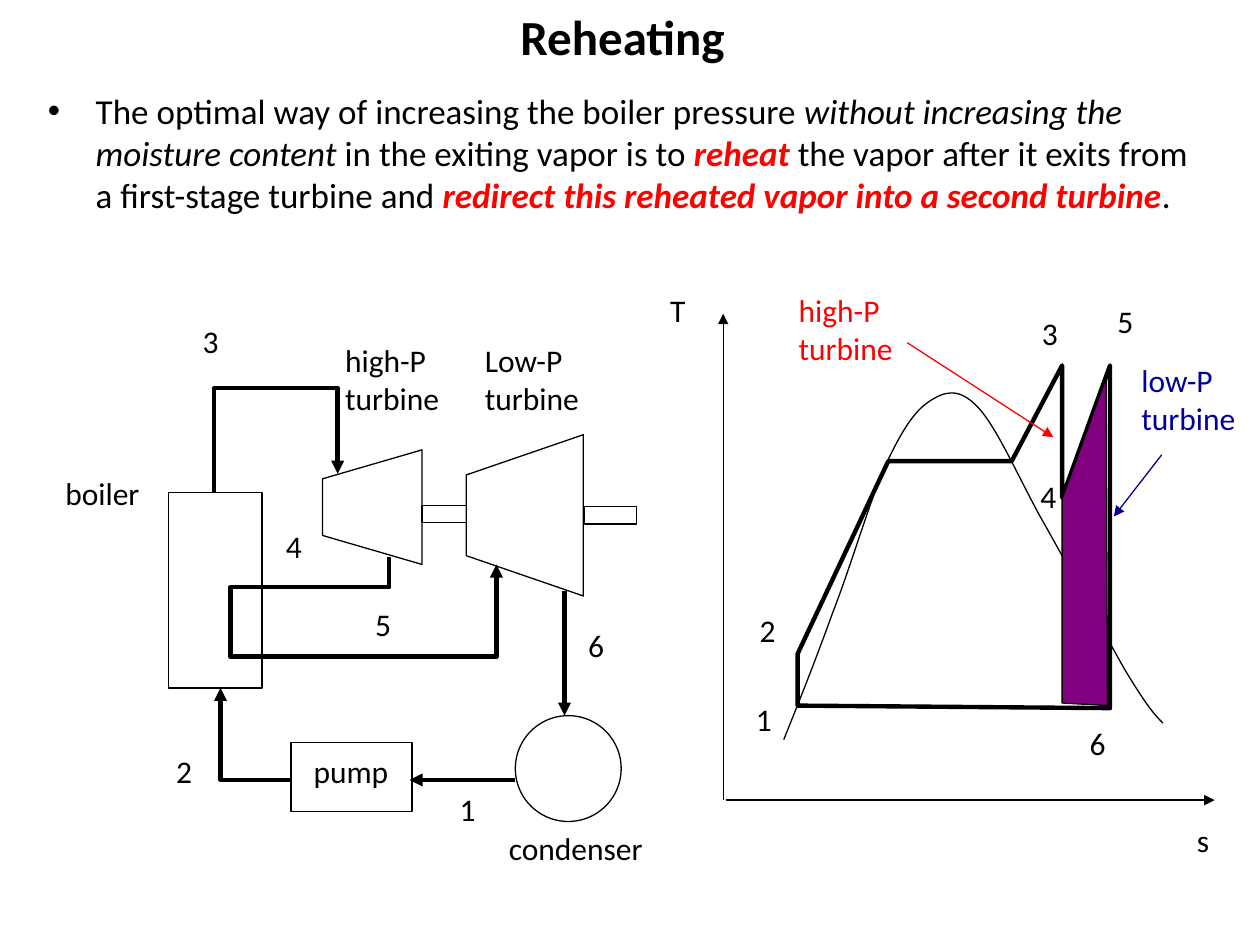
"""Build a slide on reheating: a plant diagram beside its T-s chart."""
from lxml.etree import SubElement
from pptx import Presentation
from pptx.dml.color import RGBColor
from pptx.enum.shapes import MSO_CONNECTOR, MSO_SHAPE
from pptx.enum.text import MSO_ANCHOR, MSO_AUTO_SIZE, PP_ALIGN
from pptx.oxml.ns import qn
from pptx.util import Inches, Pt

BLACK = RGBColor(0x00, 0x00, 0x00)
RED = RGBColor(0xFF, 0x00, 0x00)
BLUE = RGBColor(0x00, 0x00, 0x99)
PURPLE = RGBColor(0x80, 0x00, 0x80)
FONT = "Calibri"
THIN, THICK = 0.75, 2.5

TITLE = "Reheating"
STRONG = dict(color=RED, bold=True, italic=True)
BODY = [
    ("The optimal way of increasing the boiler pressure ", {}),
    ("without increasing the moisture content", dict(italic=True)),
    (" in the exiting vapor is to ", {}),
    ("reheat", STRONG),
    (" the vapor after it exits from a first-stage turbine and ", {}),
    ("redirect this reheated vapor into a second turbine", STRONG),
    (".", {}),
]

BOILER = (MSO_SHAPE.RECTANGLE, 1.34, 3.91, 0.74, 1.55)
HIGH_SHAFT = (MSO_SHAPE.RECTANGLE, 3.35, 4.01, 0.35, 0.14)
LOW_SHAFT = (MSO_SHAPE.RECTANGLE, 4.64, 4.02, 0.41, 0.14)
CONDENSER = (MSO_SHAPE.OVAL, 4.09, 5.68, 0.84, 0.84)
PUMP = (MSO_SHAPE.RECTANGLE, 2.31, 5.89, 0.96, 0.55)

TURBINES = [
    [(3.35, 3.57), (2.56, 3.8), (2.56, 4.25), (3.35, 4.48)],
    [(4.63, 3.45), (3.7, 3.77), (3.7, 4.41), (4.63, 4.73)],
]
PIPES = [
    [(1.7, 3.91), (1.7, 3.08), (2.68, 3.08), (2.68, 3.76)],
    [(3.09, 4.42), (3.09, 4.66), (1.83, 4.66), (1.83, 5.21), (3.94, 5.21), (3.94, 4.48)],
    [(2.3, 6.19), (1.75, 6.19), (1.75, 5.46)],
]
DOME = [
    (6.22, 5.87),
    (6.35, 5.55), (6.48, 5.22), (6.61, 4.86),
    (6.75, 4.5), (6.9, 3.99), (7.02, 3.71),
    (7.15, 3.43), (7.25, 3.27), (7.37, 3.19),
    (7.49, 3.11), (7.6, 3.07), (7.75, 3.22),
    (7.9, 3.37), (8.06, 3.74), (8.25, 4.09),
    (8.45, 4.44), (8.77, 5.04), (8.93, 5.32),
    (9.1, 5.6), (9.16, 5.67), (9.23, 5.74),
]
CYCLE = [(6.33, 5.6), (6.33, 5.19), (7.05, 3.66), (8.03, 3.66),
         (8.43, 2.9), (8.43, 3.95), (8.81, 2.9), (8.81, 5.62)]
REHEAT_AREA = [(8.43, 3.96), (8.78, 3), (8.79, 5.6), (8.43, 5.58)]

ARROWS = [
    ((4.48, 4.69), (4.48, 5.68), BLACK, THICK),
    ((4.09, 6.19), (3.25, 6.19), BLACK, THICK),
    ((5.74, 6.35), (5.74, 2.49), BLACK, THIN),
    ((5.76, 6.35), (9.64, 6.35), BLACK, THIN),
    ((7.2, 2.72), (8.36, 3.47), RED, THIN),
    ((9.22, 3.61), (8.84, 4.1), BLUE, THIN),
]

PLANT_LABELS = [
    ("boiler", 0.42, 3.71, 0.85), ("high-P\nturbine", 2.64, 2.66, 0.99),
    ("Low-P\nturbine", 3.75, 2.66, 0.99), ("pump", 2.39, 5.92, 0.83),
    ("condenser", 3.94, 6.53, 1.33),
]
CHART_LABELS = [("T", 5.22, 2.26, 0.37), ("s", 9.4, 6.47, 0.31)]
STATES = [
    ("1", 3.55, 6.22), ("2", 1.3, 5.92), ("3", 1.51, 2.51),
    ("4", 2.17, 4.13), ("5", 2.88, 4.75), ("6", 4.57, 4.92),
    ("1", 5.9, 5.51), ("2", 5.93, 4.8), ("3", 8.17, 2.44),
    ("4", 8.16, 3.74), ("5", 8.77, 2.35), ("6", 8.55, 5.7),
]
COLORED_LABELS = [
    ("high-P\nturbine", 6.24, 2.26, 0.99, RED),
    ("low-P\nturbine", 8.96, 2.82, 0.99, BLUE),
]


def add_text(para, text, size=18, color=BLACK, bold=False, italic=False):
    span = para.add_run()
    span.text = text
    font = span.font
    font.name, font.size, font.bold, font.italic = FONT, Pt(size), bold, italic
    font.color.rgb = color


def place(shape, left, top, width, height):
    shape.left, shape.top = Inches(left), Inches(top)
    shape.width, shape.height = Inches(width), Inches(height)


def style_line(shape, color=BLACK, weight=THIN, arrow=False):
    shape.line.color.rgb = color
    shape.line.width = Pt(weight)
    if arrow:
        SubElement(shape.line._get_or_add_ln(), qn("a:tailEnd"), type="triangle")


def style_shape(shape, fill=None, **line):
    shape.shadow.inherit = False
    if fill is None:
        shape.fill.background()
    else:
        shape.fill.solid()
        shape.fill.fore_color.rgb = fill
    style_line(shape, **line)


def add_outline(page, points, closed=False, **style):
    start, *rest = [(Inches(x), Inches(y)) for x, y in points]
    builder = page.shapes.build_freeform(*start)
    builder.add_line_segments(rest, close=closed)
    shape = builder.convert_to_shape()
    style_shape(shape, **style)
    return shape


def curve(shape):
    """Turn each three line segments into one cubic curve."""
    segments = list(shape._element.iter(qn("a:lnTo")))
    for first in range(0, len(segments), 3):
        group = segments[first:first + 3]
        bezier = SubElement(group[0].getparent(), qn("a:cubicBezTo"))
        for segment in group:
            bezier.append(segment[0])
            segment.getparent().remove(segment)


def add_arrow(page, start, end, color, weight):
    ends = [Inches(value) for value in (*start, *end)]
    arrow = page.shapes.add_connector(MSO_CONNECTOR.STRAIGHT, *ends)
    style_line(arrow, color, weight, arrow=True)
    SubElement(arrow._element.spPr, qn("a:effectLst"))


def add_label(page, text, left, top, width=0.34, color=BLACK):
    lines = text.split("\n")
    height = 0.09 + 0.34 * len(lines)
    box = page.shapes.add_textbox(*map(Inches, (left, top, width, height)))
    frame = box.text_frame
    frame.word_wrap = False
    frame.auto_size = MSO_AUTO_SIZE.SHAPE_TO_FIT_TEXT
    for index, line in enumerate(lines):
        para = frame.add_paragraph() if index else frame.paragraphs[0]
        add_text(para, line, color=color)


def add_heading(page):
    title, body = page.placeholders
    place(title, 0.69, 0, 8.5, 0.57)
    title.text_frame.vertical_anchor = MSO_ANCHOR.MIDDLE
    para = title.text_frame.paragraphs[0]
    para.alignment = PP_ALIGN.CENTER
    add_text(para, TITLE, size=28, bold=True)

    place(body, 0.28, 0.66, 9.43, 1.31)
    body.text_frame.auto_size = MSO_AUTO_SIZE.NONE
    para = body.text_frame.paragraphs[0]
    para.space_before = Pt(4)
    properties = para._p.get_or_add_pPr()
    properties.set("marL", str(Inches(0.38)))
    properties.set("indent", str(Inches(-0.38)))
    SubElement(properties, qn("a:buChar"), char="•")
    for text, style in BODY:
        add_text(para, text, size=20, **style)


def main():
    deck = Presentation()
    deck.slide_width, deck.slide_height = Inches(10), Inches(7.5)
    page = deck.slides.add_slide(deck.slide_layouts[1])
    add_heading(page)
    for kind, *frame in (BOILER, HIGH_SHAFT, LOW_SHAFT, CONDENSER, PUMP):
        style_shape(page.shapes.add_shape(kind, *map(Inches, frame)))
    for turbine in TURBINES:
        add_outline(page, turbine, closed=True)
    for pipe in PIPES:
        add_outline(page, pipe, weight=THICK, arrow=True)
    curve(add_outline(page, DOME))
    add_outline(page, CYCLE, closed=True, weight=THICK)
    add_outline(page, REHEAT_AREA, closed=True, fill=PURPLE)
    for arrow in ARROWS:
        add_arrow(page, *arrow)
    for label in PLANT_LABELS + CHART_LABELS + STATES + COLORED_LABELS:
        add_label(page, *label)
    deck.save("out.pptx")


if __name__ == "__main__":
    main()
